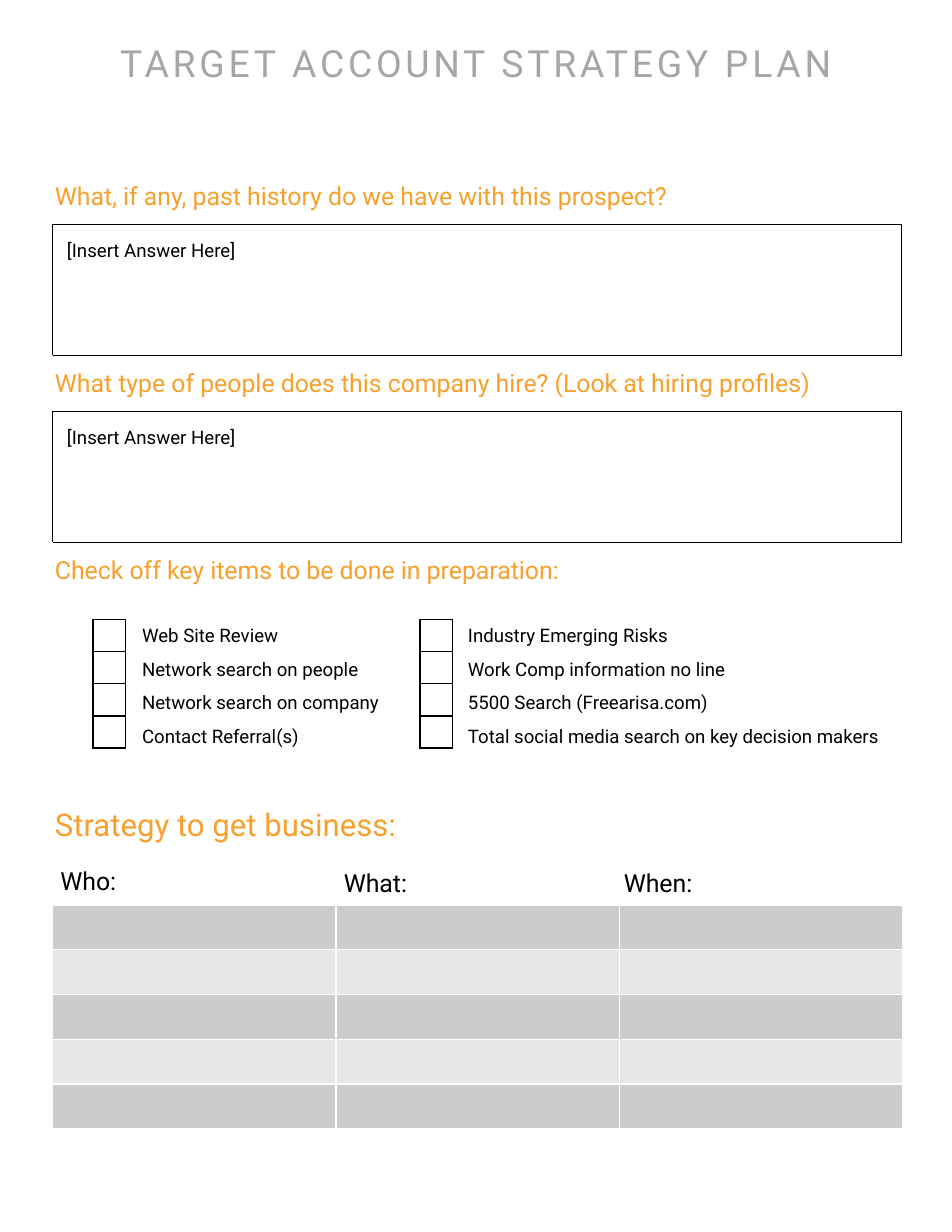
from pptx import Presentation
from pptx.util import Inches, Pt
from pptx.dml.color import RGBColor
from pptx.enum.dml import MSO_LINE
from pptx.enum.shapes import MSO_SHAPE as Shape
from pptx.enum.text import PP_ALIGN as Align, MSO_AUTO_SIZE as Auto
from lxml.etree import SubElement
from pptx.oxml.ns import qn

HUES = {
    "head": "F7A02D",
    "title": "A6A6A6",
    "ink": "000000",
    "dark": "CCCCCC",
    "light": "E7E7E7",
    "white": "FFFFFF",
}


class Page:
    font = "Roboto"

    def __init__(self, deck):
        self.shapes = deck.slides.add_slide(deck.slide_layouts[6]).shapes

    def text(self, box, words, size=16, hue="ink", tight=True, gap=None, align=None, track=0):
        """Add a text box; track is letter spacing in points."""
        frame = self.shapes.add_textbox(*map(Inches, box)).text_frame
        frame.word_wrap = True
        frame.auto_size = Auto.SHAPE_TO_FIT_TEXT
        if tight:
            frame.margin_left = frame.margin_right = Inches(0.07)
            frame.margin_top = frame.margin_bottom = Inches(0.03)
        frame.text = words
        for para in frame.paragraphs:
            para.line_spacing = gap
            para.alignment = align
            for run in para.runs:
                run.font.name = self.font
                run.font.size = Pt(size)
                run.font.color.rgb = RGBColor.from_string(HUES[hue])
                if track:
                    run.font._element.set("spc", str(int(track * 100)))

    def answer(self, top):
        self.text((0.5, top + 0.08, 7.37, 0.3), "[Insert Answer Here]", 12, tight=False)
        rect = self.shapes.add_shape(
            Shape.RECTANGLE, Inches(0.47), Inches(top), Inches(7.58), Inches(1.17))
        rect.shadow.inherit = False
        rect.fill.background()
        rect.line.color.rgb = RGBColor.from_string(HUES["ink"])
        rect.line.width = Pt(0.25)
        rect.line.dash_style = MSO_LINE.ROUND_DOT

    def grid(self, box, rows, cols, edge, fills=None):
        """Add an empty table; fills are row colours used in turn."""
        table = self.shapes.add_table(rows, cols, *map(Inches, box)).table
        table.first_row = table.horz_banding = False
        for num, row in enumerate(table.rows):
            for cell in row.cells:
                self.border(cell, edge)
                if fills:
                    cell.fill.solid()
                    cell.fill.fore_color.rgb = RGBColor.from_string(HUES[fills[num % len(fills)]])
                else:
                    cell.fill.background()
                # A small end mark lets the rows keep their height.
                para = cell.text_frame.paragraphs[0]
                SubElement(para._p, qn("a:endParaRPr"), sz="1000")

    def border(self, cell, hue):
        props = cell._tc.get_or_add_tcPr()
        for side in "LRTB":
            line = SubElement(props, qn(f"a:ln{side}"), w=str(Pt(1)))
            fill = SubElement(line, qn("a:solidFill"))
            SubElement(fill, qn("a:srgbClr"), val=HUES[hue])

    def checks(self, left, label, width, items):
        self.text((label, 5.42, width, 1.31), "\n".join(items), 12, tight=False, gap=1.5)
        self.grid((left, 5.53, 0.29, 1.15), len(items), 1, "ink")


def main():
    deck = Presentation()
    deck.slide_width, deck.slide_height = Inches(8.5), Inches(11)
    page = Page(deck)

    page.text((0.44, 0.33, 7.62, 0.47), "TARGET ACCOUNT STRATEGY PLAN", 24, "title",
              align=Align.CENTER, track=2.4)

    heads = [
        "What, if any, past history do we have with this prospect?",
        "What type of people does this company hire? (Look at hiring profiles)",
        "Check off key items to be done in preparation:",
    ]
    for num, head in enumerate(heads):
        page.text((0.42, 1.58 + 1.67 * num, 7.92, 0.34), head, hue="head")
    for top in (2, 3.67):
        page.answer(top)

    page.checks(0.83, 1.17, 2.58, [
        "Web Site Review",
        "Network search on people",
        "Network search on company",
        "Contact Referral(s)",
    ])
    page.checks(3.75, 4.08, 4.25, [
        "Industry Emerging Risks",
        "Work Comp information no line",
        "5500 Search (Freearisa.com)",
        "Total social media search on key decision makers",
    ])

    page.text((0.42, 7.16, 7.74, 0.4), "Strategy to get business:", 20, "head")
    for left, top, word in ((0.47, 7.7, "Who:"), (3, 7.72, "What:"), (5.5, 7.72, "When:")):
        page.text((left, top, 1.33, 0.34), word)
    page.grid((0.47, 8.08, 7.59, 2), 5, 3, "white", ("dark", "light"))

    deck.save("out.pptx")


if __name__ == "__main__":
    main()
